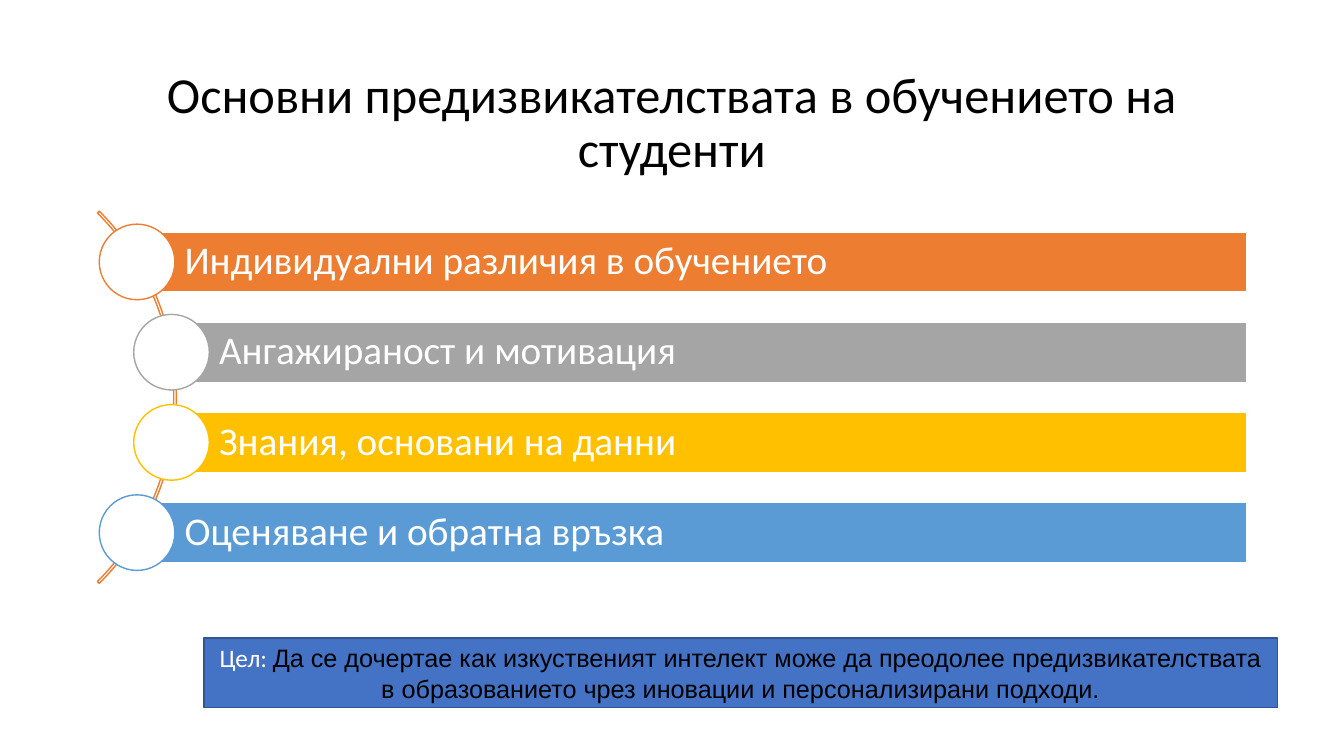
import dataclasses
import pptx
import pptx.dml.color
import pptx.enum.shapes
import pptx.enum.text
import pptx.util

Pt = pptx.util.Pt
Kind = pptx.enum.shapes.MSO_SHAPE
Align = pptx.enum.text.PP_ALIGN


@dataclasses.dataclass(frozen=True)
class Theme:
    white: str = "FFFFFF"
    black: str = "000000"
    orange: str = "ED7D31"
    gray: str = "A5A5A5"
    gold: str = "FFC000"
    sky: str = "5B9BD5"
    blue: str = "4472C4"
    navy: str = "325491"
    sans: str = "Calibri"
    body: str = "Arial"
    title: int = 36
    item: int = 28
    note: int = 18


@dataclasses.dataclass(frozen=True)
class Box:
    left: float
    top: float
    width: float
    height: float

    def spans(self) -> list:
        return [Pt(v) for v in dataclasses.astuple(self)]


@dataclasses.dataclass(frozen=True)
class Item:
    text: str
    color: str
    left: float


THEME = Theme()
OUTER, INNER = 97.9, 122.5
ITEMS = (
    Item("Индивидуални различия в обучението", THEME.orange, OUTER),
    Item("Ангажираност и мотивация", THEME.gray, INNER),
    Item("Знания, основани на данни", THEME.gold, INNER),
    Item("Оценяване и обратна връзка", THEME.sky, OUTER),
)
FIRST, PITCH, RIGHT = 187.1, 64.45, 890.6  # first bar's middle, step, right edge
BAR, DISC = 43, 54


def tint(code: str) -> pptx.dml.color.RGBColor:
    return pptx.dml.color.RGBColor.from_string(code)


def draw(slide, kind, box: Box, line: str, fill: str = ""):
    shape = slide.shapes.add_shape(kind, *box.spans())
    shape.shadow.inherit = False
    if fill:
        shape.fill.solid()
        shape.fill.fore_color.rgb = tint(fill)
    else:
        shape.fill.background()
    shape.line.color.rgb = tint(line)
    shape.line.width = Pt(1)
    return shape


def write(shape, text: str, *, size: int, color: str, font: str = THEME.sans,
          align=Align.LEFT, space: float = 1.0, inset: float = 7.2) -> None:
    """Append a run to the shape's only paragraph."""
    frame = shape.text_frame
    frame.word_wrap = True
    frame.vertical_anchor = pptx.enum.text.MSO_ANCHOR.MIDDLE
    frame.margin_left = Pt(inset)
    para = frame.paragraphs[0]
    para.alignment, para.line_spacing = align, space
    run = para.add_run()
    run.text = text
    run.font.name, run.font.size = font, Pt(size)
    run.font.color.rgb = tint(color)


def row(slide, item: Item, mid: float) -> None:
    box = Box(item.left, mid - BAR / 2, RIGHT - item.left, BAR)
    bar = draw(slide, Kind.RECTANGLE, box, THEME.white, item.color)
    write(bar, item.text, size=THEME.item, color=THEME.white, space=0.9, inset=34)
    disc = Box(item.left - DISC / 2, mid - DISC / 2, DISC, DISC)
    draw(slide, Kind.OVAL, disc, item.color, THEME.white)


def main() -> None:
    deck = pptx.Presentation()
    deck.slide_width, deck.slide_height = Pt(960), Pt(540)
    slide = deck.slides.add_slide(deck.slide_layouts[6])

    # Title
    title = slide.shapes.add_textbox(*Box(66, 44, 828, 89.5).spans())
    write(title, "Основни предизвикателствата в обучението на студенти",
          size=THEME.title, color=THEME.black, align=Align.CENTER, space=0.9)

    # Arc behind the list: from 315 to 45 degrees
    arc = draw(slide, Kind.BLOCK_ARC, Box(-250, 95.8, 376, 376), THEME.orange)
    for i, value in enumerate((189, 27, 0.005)):
        arc.adjustments[i] = value

    # List of challenges
    for i, item in enumerate(ITEMS):
        row(slide, item, FIRST + i * PITCH)

    # Goal
    goal = draw(slide, Kind.RECTANGLE, Box(145.6, 455.6, 766.8, 50),
                THEME.navy, THEME.blue)
    write(goal, "Цел: ", size=THEME.note, color=THEME.white, align=Align.CENTER)
    write(goal, "Да се дочертае как изкуственият интелект може да преодолее "
          "предизвикателствата в образованието чрез иновации и "
          "персонализирани подходи.", size=THEME.note, color=THEME.black,
          font=THEME.body, align=Align.CENTER)

    deck.save("out.pptx")


if __name__ == "__main__":
    main()
